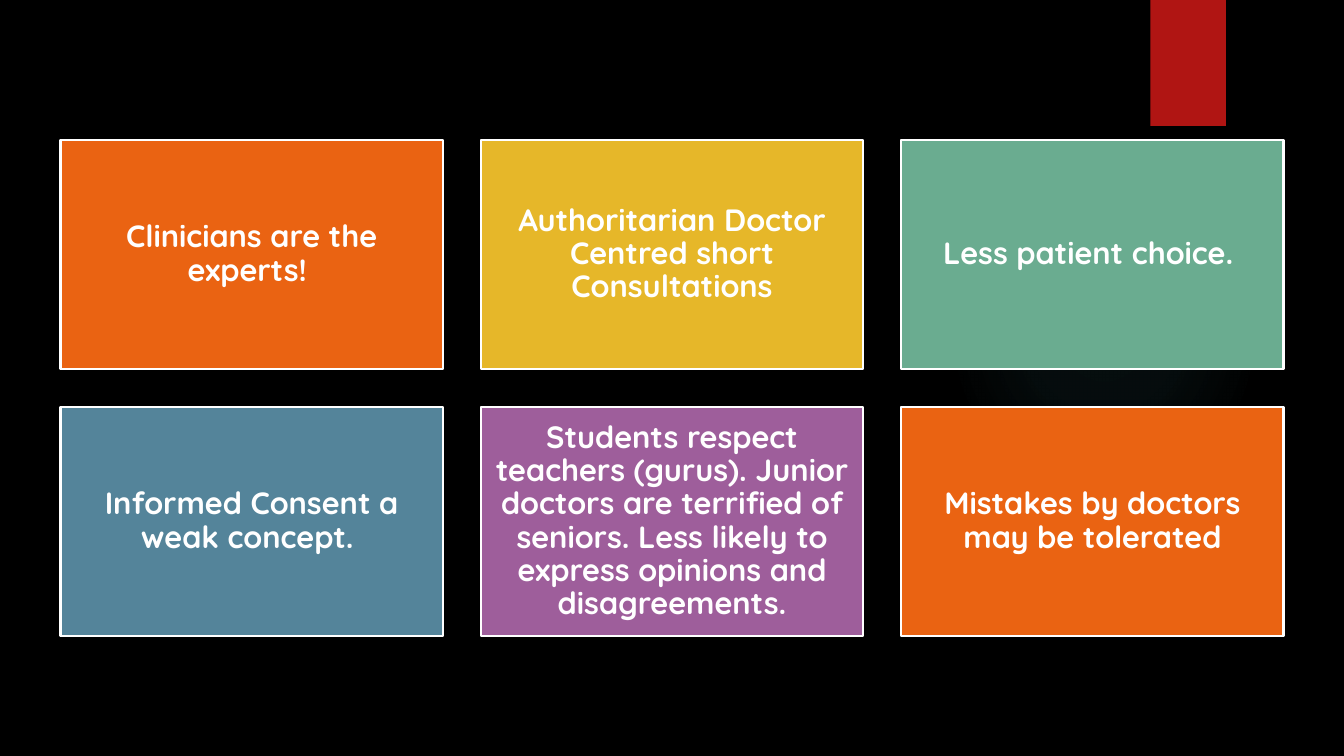
from dataclasses import dataclass

from lxml import etree
from pptx import Presentation
from pptx.dml.color import RGBColor
from pptx.enum.shapes import MSO_SHAPE
from pptx.enum.text import MSO_ANCHOR, PP_ALIGN
from pptx.util import Inches, Pt

RECTANGLE, OVAL = MSO_SHAPE.RECTANGLE, MSO_SHAPE.OVAL
CENTER, MIDDLE = PP_ALIGN.CENTER, MSO_ANCHOR.MIDDLE
BLANK_LAYOUT = 6


@dataclass(frozen=True)
class Theme:
    background: str = "000000"
    ribbon: str = "B01513"
    glow: str = "50B9C1"
    text: str = "FFFFFF"
    orange: str = "EA6312"
    yellow: str = "E6B729"
    green: str = "6AAC90"
    blue: str = "54849A"
    purple: str = "9E5E9B"
    font: str = "Quicksand"
    size: float = 22
    outline: float = 1.5


theme = Theme()
COLUMNS = 3
LEFT, TOP = 0.6, 1.39
TILE_WIDTH, TILE_HEIGHT = 3.79, 2.27
GAP = 0.38
INSET = Inches(0.09)

statements = [
    ("Clinicians are the experts! ", theme.orange),
    ("Authoritarian Doctor Centred short Consultations", theme.yellow),
    ("Less patient choice. ", theme.green),
    ("Informed Consent a weak concept. ", theme.blue),
    ("Students respect teachers (gurus). Junior doctors are terrified of seniors. "
     "Less likely to express opinions and disagreements.", theme.purple),
    ("Mistakes by doctors may be tolerated", theme.orange),
]

deck = Presentation()
deck.slide_width, deck.slide_height = Inches(13.33), Inches(7.5)
slide = deck.slides.add_slide(deck.slide_layouts[BLANK_LAYOUT])
slide.background.fill.solid()
slide.background.fill.fore_color.rgb = RGBColor.from_string(theme.background)


def add_block(kind, left, top, width, height, color):
    block = slide.shapes.add_shape(
        kind, Inches(left), Inches(top), Inches(width), Inches(height))
    block.shadow.inherit = False
    block.line.fill.background()
    if color:
        block.fill.solid()
        block.fill.fore_color.rgb = RGBColor.from_string(color)
    return block


glow = add_block(OVAL, 9.41, 1.83, 3.08, 3.08, None)
stops = "".join(
    f'<a:gs pos="{place * 1000}"><a:srgbClr val="{theme.glow}">'
    f'<a:alpha val="{opacity * 1000}"/></a:srgbClr></a:gs>'
    for place, opacity in ((0, 7), (36, 6), (69, 0)))
glow_fill = etree.fromstring(
    '<a:gradFill xmlns:a="http://schemas.openxmlformats.org/drawingml/2006/main">'
    f'<a:gsLst>{stops}</a:gsLst><a:path path="circle">'
    '<a:fillToRect l="50000" t="50000" r="50000" b="50000"/></a:path></a:gradFill>')
glow._element.spPr.insert(2, glow_fill)

add_block(RECTANGLE, 11.41, 0, 0.75, 1.25, theme.ribbon)

for index, (statement, color) in enumerate(statements):
    row, column = divmod(index, COLUMNS)
    tile = add_block(
        RECTANGLE,
        LEFT + column * (TILE_WIDTH + GAP), TOP + row * (TILE_HEIGHT + GAP),
        TILE_WIDTH, TILE_HEIGHT, color)
    tile.line.color.rgb = RGBColor.from_string(theme.text)
    tile.line.width = Pt(theme.outline)
    frame = tile.text_frame
    frame.word_wrap = True
    frame.vertical_anchor = MIDDLE
    frame.margin_left = frame.margin_right = INSET
    frame.margin_top = frame.margin_bottom = INSET
    paragraph = frame.paragraphs[0]
    paragraph.text = statement
    paragraph.alignment = CENTER
    paragraph.line_spacing = 0.9
    paragraph.font.name = theme.font
    paragraph.font.size = Pt(theme.size)
    paragraph.font.bold = True
    paragraph.font.color.rgb = RGBColor.from_string(theme.text)

deck.save("out.pptx")
